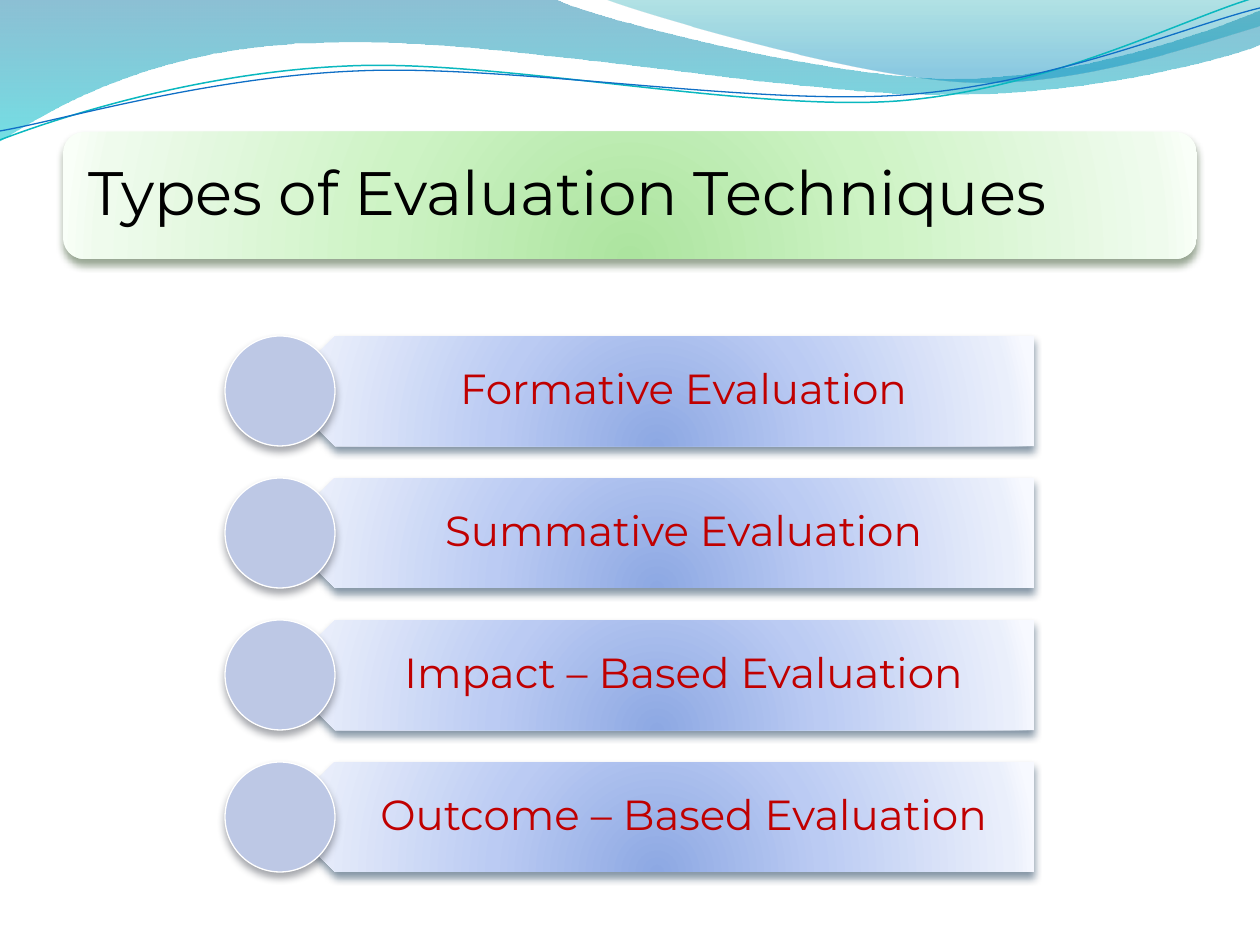
import math
import pptx
import pptx.util
import pptx.oxml
import pptx.oxml.ns
import pptx.dml.color
import pptx.enum.shapes
import pptx.enum.text

PX = 914400 / 126
COLORS = {
    "title": "000000", "item": "C00000", "circle": "BDC8E5", "rim": "FFFFFF",
    "teal": "0AB8BF", "blue": "0F6FC6",
    "title_shadow": "2B4821", "bar_shadow": "042747", "circle_shadow": "424651",
}
WIDE_WAVE = [(0, "0074A1", 45), (100, "00C6CF", 55)]
RIGHT_WAVE = [(0, "00A1A9", 30), (80, "008BBF", 45)]
GREEN = [(0, "ACE49F", 100), (43, "CDF3C4", 100), (93, "EFFBED", 100), (100, "F9FFF8", 100)]
BLUE = [(0, "8DA8E3", 100), (43, "BBCBF3", 100), (93, "EAEFFB", 100), (100, "F7F9FF", 100)]
LINEAR = '<a:lin ang="5400000" scaled="1"/>'
RADIAL = '<a:path path="circle"><a:fillToRect l="50000" t="130000" r="50000" b="-30000"/></a:path>'
NS = pptx.oxml.ns.nsdecls("a")
RGB = pptx.dml.color.RGBColor.from_string
SHAPE = pptx.enum.shapes.MSO_SHAPE


def set_gradient(sp, stops, direction):
    gs = "".join(
        f'<a:gs pos="{pos * 1000}"><a:srgbClr val="{color}"><a:alpha val="{alpha * 1000}"/></a:srgbClr></a:gs>'
        for pos, color, alpha in stops)
    sp.fill.background()
    old = sp._element.spPr.find(pptx.oxml.ns.qn("a:noFill"))
    new = pptx.oxml.parse_xml(
        f'<a:gradFill {NS} rotWithShape="1"><a:gsLst>{gs}</a:gsLst>{direction}</a:gradFill>')
    sp._element.spPr.replace(old, new)


def set_shadow(sp, color):
    sp.shadow.inherit = False
    effects = sp._element.spPr.find(pptx.oxml.ns.qn("a:effectLst"))
    effects.append(pptx.oxml.parse_xml(
        f'<a:outerShdw {NS} blurRad="57150" dist="38100" dir="5400000" algn="ctr" rotWithShape="0">'
        f'<a:srgbClr val="{color}"><a:alpha val="48000"/></a:srgbClr></a:outerShdw>'))


prs = pptx.Presentation()
prs.slide_width = pptx.util.Inches(10)
prs.slide_height = pptx.util.Inches(7.5)
slide = prs.slides.add_slide(prs.slide_layouts[5])
shapes = slide.shapes

waves = [
    ((-1, -1, 1262, 144), 0,
     [(0, 0), (554, -1), (600, 21, 837, 79, 955, 79), (1075, 79, 1207, 33, 1260, 11), (1261, 45),
      (1239, 55, 1096, 96, 940, 95), (783, 95, 481, 35, 324, 43), (163, 45, 58, 105, -1, 142), (0, 0)],
     WIDE_WAVE, None, 0),
    ((604, -1, 656, 88), 0,
     [(604, -1), (641, 14, 859, 78, 969, 82), (1079, 87, 1211, 40, 1260, 26), (1260, 0), (604, -1)],
     RIGHT_WAVE, None, 0),
    ((-3, 28, 1263, 89), -2.7,
     [(0, 140), (60, 117, 199, 72, 349, 66), (498, 59, 747, 112, 898, 101), (1050, 89, 1182, 19, 1257, -3)],
     None, "teal", 0.85),
    ((-3, 38, 1264, 73), -2.7,
     [(0, 131), (59, 121, 207, 77, 357, 71), (508, 64, 752, 106, 903, 95), (1053, 84, 1186, 26, 1260, 8)],
     None, "blue", 0.75),
]
master_tree = prs.slide_master.shapes._spTree
for n, (box, angle, segments, stops, line, width) in enumerate(waves):
    left, top, w, h = [round(v * PX) for v in box]
    builder = shapes.build_freeform(left, top)
    builder.add_line_segments([(left + w, top + h)], close=False)
    sp = builder.convert_to_shape()
    sp.rotation = angle
    cos, sin = math.cos(math.radians(-angle)), math.sin(math.radians(-angle))
    outline = ""
    for i, seg in enumerate(segments):
        pts = ""
        for x, y in zip(seg[::2], seg[1::2]):
            dx, dy = x * PX - left - w / 2, y * PX - top - h / 2
            pts += f'<a:pt x="{round(w / 2 + dx * cos - dy * sin)}" y="{round(h / 2 + dx * sin + dy * cos)}"/>'
        tag = "moveTo" if i == 0 else "lnTo" if len(seg) == 2 else "cubicBezTo"
        outline += f"<a:{tag}>{pts}</a:{tag}>"
    if stops:
        outline += "<a:close/>"
    old = sp._element.spPr.find(".//" + pptx.oxml.ns.qn("a:path"))
    old.getparent().replace(old, pptx.oxml.parse_xml(f'<a:path {NS} w="{w}" h="{h}">{outline}</a:path>'))
    sp.shadow.inherit = False
    if stops:
        set_gradient(sp, stops, LINEAR)
        sp.line.fill.background()
    else:
        sp.fill.background()
        sp.line.color.rgb = RGB(COLORS[line])
        sp.line.width = pptx.util.Pt(width)
    sp._element.nvSpPr.cNvPr.set("id", str(101 + n))
    master_tree.insert(2 + n, sp._element)

sp = shapes.add_shape(SHAPE.ROUNDED_RECTANGLE, *[round(v * PX) for v in (63, 132, 1134, 127)])
set_gradient(sp, GREEN, RADIAL)
sp.line.fill.background()
set_shadow(sp, COLORS["title_shadow"])

title = shapes.title
title.left, title.top, title.width, title.height = [round(v * PX) for v in (69, 138, 1121, 115)]
shapes._spTree.append(title._element)
tf = title.text_frame
tf.text = "Types of Evaluation Techniques"
tf.auto_size = pptx.enum.text.MSO_AUTO_SIZE.NONE
tf.margin_left = tf.margin_right = tf.margin_top = tf.margin_bottom = round(19 * PX)
tf.vertical_anchor = pptx.enum.text.MSO_ANCHOR.MIDDLE
p = tf.paragraphs[0]
p.alignment = pptx.enum.text.PP_ALIGN.LEFT
p.line_spacing = 0.9
p.font.name = "Montserrat"
p.font.size = pptx.util.Pt(35)
p.font.color.rgb = RGB(COLORS["title"])

TOP, PITCH, HEIGHT = 336, 142, 110
items = ["Formative Evaluation", "Summative Evaluation",
         "Impact – Based Evaluation", "Outcome – Based Evaluation"]
for i, item in enumerate(items):
    y = TOP + i * PITCH
    bar = shapes.add_shape(SHAPE.PENTAGON, *[round(v * PX) for v in (280, y, 754, HEIGHT)])
    bar.rotation = 180
    set_gradient(bar, BLUE, RADIAL)
    bar.line.fill.background()
    set_shadow(bar, COLORS["bar_shadow"])

    label = shapes.add_textbox(*[round(v * PX) for v in (308, y, 727, HEIGHT)])
    tf = label.text_frame
    tf.word_wrap = True
    tf.vertical_anchor = pptx.enum.text.MSO_ANCHOR.MIDDLE
    tf.margin_left, tf.margin_right = round(48 * PX), round(24 * PX)
    tf.margin_top = tf.margin_bottom = round(12 * PX)
    p = tf.paragraphs[0]
    p.text = item
    p.alignment = pptx.enum.text.PP_ALIGN.CENTER
    p.line_spacing = 0.9
    p.font.name = "Montserrat"
    p.font.size = pptx.util.Pt(24)
    p.font.color.rgb = RGB(COLORS["item"])

    circle = shapes.add_shape(SHAPE.OVAL, *[round(v * PX) for v in (225, y, HEIGHT, HEIGHT)])
    circle.fill.solid()
    circle.fill.fore_color.rgb = RGB(COLORS["circle"])
    circle.line.color.rgb = RGB(COLORS["rim"])
    circle.line.width = pptx.util.Pt(0.75)
    set_shadow(circle, COLORS["circle_shadow"])

prs.save("out.pptx")
